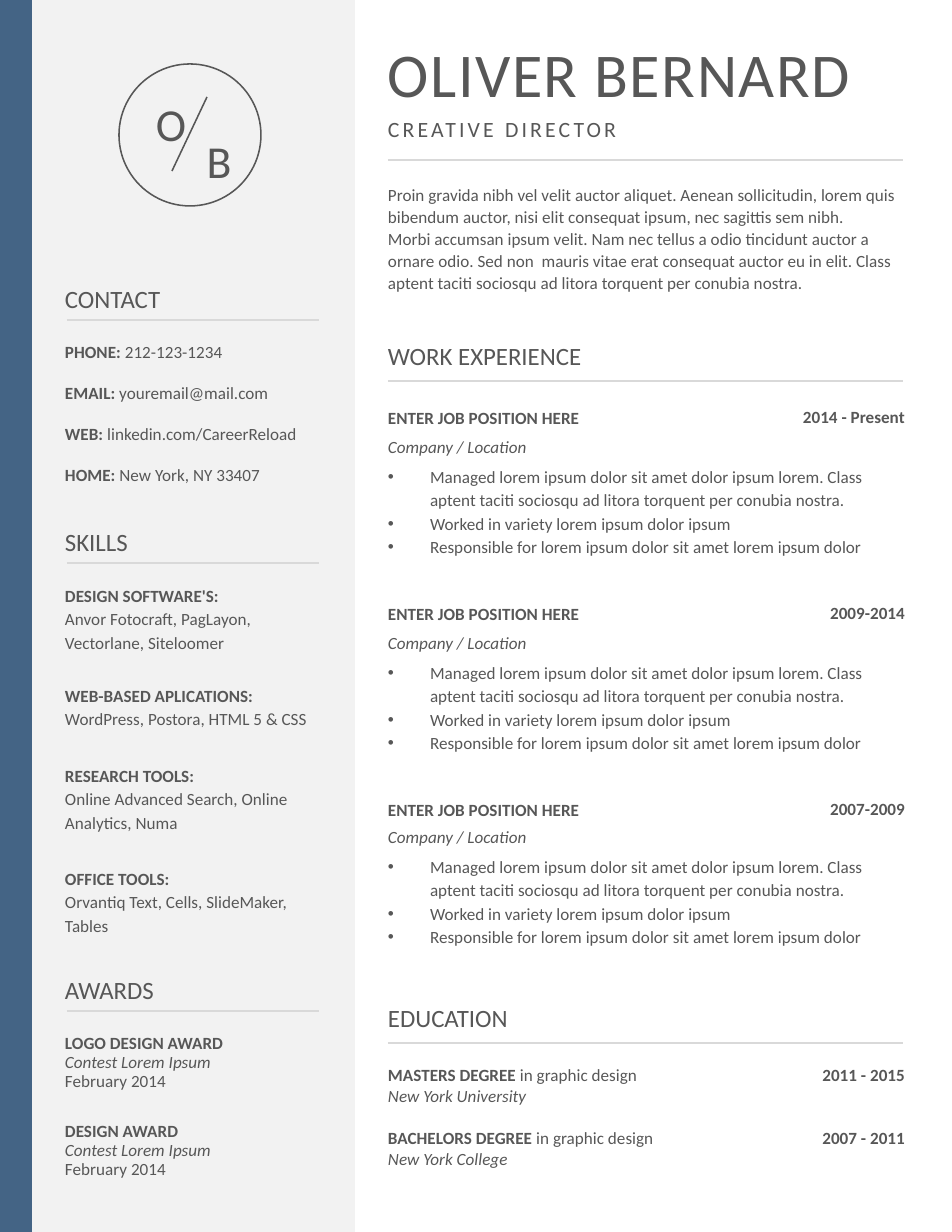
from dataclasses import dataclass

from lxml.etree import SubElement
from pptx import Presentation
from pptx.dml.color import RGBColor
from pptx.enum.shapes import MSO_CONNECTOR, MSO_SHAPE
from pptx.enum.text import MSO_ANCHOR, MSO_AUTO_SIZE, PP_ALIGN as Align
from pptx.oxml.ns import qn
from pptx.util import Emu, Pt

EMU_PER_PX = 914400 / 112


def px(length):
    return Emu(round(length * EMU_PER_PX))


@dataclass(frozen=True)
class Theme:
    font: str = "Calibri"
    ink: str = "575757"
    hairline: str = "D9D9D9"
    sidebar: str = "F2F2F2"
    accent: str = "446485"
    name: float = 40
    monogram: float = 29.4
    heading: float = 16
    role: float = 14
    body: float = 11
    line: float = 1


def add_run(paragraph, text, *, font, color, size, bold=False, italic=False, tracking=0):
    run = paragraph.add_run()
    run.text = text
    run.font.name = font
    run.font.size = Pt(size)
    run.font.bold = bold
    run.font.italic = italic
    run.font.color.rgb = RGBColor.from_string(color)
    if tracking:
        run.font._element.set("spc", str(round(tracking * 100)))


def bold(text):
    return text, {"bold": True}


def italic(text):
    return text, {"italic": True}


class Page:
    FLUSH = (0, 6, 11, 6)
    PADDED = (11, 6, 11, 6)
    DATED = (0, 6, 0, 6)
    TIGHT = (0, 0, 0, 0)

    def __init__(self, slide, theme):
        self.slide = slide
        self.theme = theme

    def panel(self, left, top, width, height, color):
        panel = self.slide.shapes.add_shape(
            MSO_SHAPE.RECTANGLE, px(left), px(top), px(width), px(height))
        panel.shadow.inherit = False
        panel.fill.solid()
        panel.fill.fore_color.rgb = RGBColor.from_string(color)
        panel.line.fill.background()

    def ring(self, left, top, diameter):
        ring = self.slide.shapes.add_shape(
            MSO_SHAPE.OVAL, px(left), px(top), px(diameter), px(diameter))
        ring.shadow.inherit = False
        ring.fill.background()
        ring.line.color.rgb = RGBColor.from_string(self.theme.ink)
        ring.line.width = Pt(self.theme.line)

    def line(self, x1, y1, x2, y2, color):
        line = self.slide.shapes.add_connector(
            MSO_CONNECTOR.STRAIGHT, px(x1), px(y1), px(x2), px(y2))
        line.line.color.rgb = RGBColor.from_string(color)
        line.line.width = Pt(self.theme.line)
        SubElement(line._element.spPr, qn("a:effectLst"))

    def text(self, box, *paragraphs, holder=None, inset=FLUSH, spacing=1.07,
             align=Align.LEFT, bullet=None, size=None, tracking=0):
        left, top, width, height = map(px, box)
        if holder is None:
            shape = self.slide.shapes.add_textbox(left, top, width, height)
        else:
            shape = self.slide.placeholders[holder]
            shape.left, shape.top, shape.width, shape.height = left, top, width, height
        frame = shape.text_frame
        frame.word_wrap = True
        frame.auto_size = MSO_AUTO_SIZE.NONE
        frame.vertical_anchor = MSO_ANCHOR.TOP
        (frame.margin_left, frame.margin_top,
         frame.margin_right, frame.margin_bottom) = map(px, inset)
        for index, runs in enumerate(paragraphs):
            paragraph = frame.add_paragraph() if index else frame.paragraphs[0]
            self.bullet(paragraph, bullet)
            paragraph.alignment = align
            paragraph.line_spacing = spacing
            paragraph.space_before = paragraph.space_after = Pt(0)
            for run in runs if isinstance(runs, list) else [runs]:
                words, emphasis = (run, {}) if isinstance(run, str) else run
                add_run(paragraph, words, font=self.theme.font, color=self.theme.ink,
                        size=size or self.theme.body, tracking=tracking, **emphasis)

    def bullet(self, paragraph, mark):
        indent = px(42) if mark else 0
        properties = paragraph._p.get_or_add_pPr()
        properties.set("marL", str(indent))
        properties.set("indent", str(-indent))
        if mark:
            SubElement(properties, qn("a:buChar")).set("char", mark)
        else:
            SubElement(properties, qn("a:buNone"))

    def side_heading(self, top, title):
        self.text((54, top, 165, 47), title, inset=self.PADDED, size=self.theme.heading)
        self.line(67, top + 44, 319, top + 44, self.theme.hairline)

    def main_heading(self, top, title):
        self.text((388, top, 328, 53), title, size=self.theme.heading)
        self.line(388, top + 48, 903, top + 48, self.theme.hairline)

    def job(self, top, list_top, years, holder):
        self.text((388, top, 412, 36), bold("ENTER JOB POSITION HERE"))
        self.text((722, top - 1, 183, 36), bold(years), inset=self.DATED, align=Align.RIGHT)
        self.text((388, list_top - 28, 412, 36), italic("Company / Location"))
        self.text(
            (388, list_top, 528, 111),
            "Managed lorem ipsum dolor sit amet dolor ipsum lorem. Class aptent taciti "
            "sociosqu ad litora torquent per conubia nostra.",
            "Worked in variety lorem ipsum dolor ipsum",
            "Responsible for lorem ipsum dolor sit amet lorem ipsum dolor",
            holder=holder, spacing=1.15, bullet="•")

    def degree(self, top, title, school, years):
        self.text((388, top, 444, 40), [bold(title), " in graphic design"])
        self.text((388, top + 21, 444, 40), italic(school))
        self.text((771, top, 134, 41), bold(years), inset=self.DATED, align=Align.RIGHT)


def main():
    deck = Presentation()
    deck.slide_width, deck.slide_height = px(952), px(1232)
    theme = Theme()
    page = Page(deck.slides.add_slide(deck.slide_layouts.get_by_name("Comparison")), theme)

    page.panel(-3, 0, 358, 1232, theme.sidebar)
    page.panel(-3, 0, 35, 1232, theme.accent)

    page.ring(119, 64, 142)
    page.line(172, 171, 207, 97, theme.ink)
    for letter, box in (("O", (146, 87, 50, 60)), ("B", (195, 124, 48, 60))):
        page.text(box, letter, inset=page.TIGHT, spacing=Pt(41.2), align=Align.CENTER,
                  size=theme.monogram, tracking=10.1)

    page.text((388, 24, 550, 84), "OLIVER BERNARD", holder=0, size=theme.name, tracking=1)
    page.text((388, 108, 328, 53), "CREATIVE DIRECTOR", size=theme.role, tracking=2)
    page.line(388, 160, 903, 160, theme.hairline)
    page.text(
        (388, 177, 529, 142),
        "Proin gravida nibh vel velit auctor aliquet. Aenean sollicitudin, lorem quis "
        "bibendum auctor, nisi elit consequat ipsum, nec sagittis sem nibh.",
        "Morbi accumsan ipsum velit. Nam nec tellus a odio tincidunt auctor a ornare odio. "
        "Sed non  mauris vitae erat consequat auctor eu in elit. Class aptent taciti "
        "sociosqu ad litora torquent per conubia nostra.",
        holder=1)

    page.side_heading(276, "CONTACT")
    contacts = (("PHONE:", " 212-123-1234"), ("EMAIL:", " youremail@mail.com"),
                ("WEB:", " linkedin.com/CareerReload"), ("HOME:", " New York, NY 33407"))
    for row, (label, detail) in enumerate(contacts):
        page.text((54, 334 + 41 * row, 272, 34), [bold(label), detail], inset=page.PADDED)

    page.side_heading(519, "SKILLS")
    skills = (
        (576, 95, [bold("DESIGN SOFTWARE'S:"), "Anvor Fotocraft, PagLayon,",
                   "Vectorlane, Siteloomer"]),
        (676, 80, [[bold("WEB-BASED APLICATIONS: "), "WordPress, Postora, HTML 5 & CSS"]]),
        (756, 97, [bold("RESEARCH TOOLS:"), "Online Advanced Search, Online Analytics, Numa"]),
        (859, 97, [bold("OFFICE TOOLS:"), "Orvantiq Text, Cells, SlideMaker, Tables"]),
    )
    for top, height, lines in skills:
        page.text((54, top, 273, height), *lines, inset=page.PADDED, spacing=1.15)

    page.side_heading(967, "AWARDS")
    for award, title in enumerate(("LOGO DESIGN AWARD", "DESIGN AWARD")):
        details = (bold(title), italic("Contest Lorem Ipsum"), "February 2014")
        for row, detail in enumerate(details):
            page.text((54, 1025 + 88 * award + 19 * row, 269, 29), detail, inset=page.PADDED)

    page.main_heading(333, "WORK EXPERIENCE")
    page.job(400, 457, "2014 - Present", holder=2)
    page.job(596, 653, "2009-2014", holder=3)
    page.job(792, 847, "2007-2009", holder=4)

    page.main_heading(995, "EDUCATION")
    page.degree(1057, "MASTERS DEGREE", "New York University", "2011 - 2015")
    page.degree(1120, "BACHELORS DEGREE", "New York College", "2007 - 2011")

    deck.save("out.pptx")


if __name__ == "__main__":
    main()
